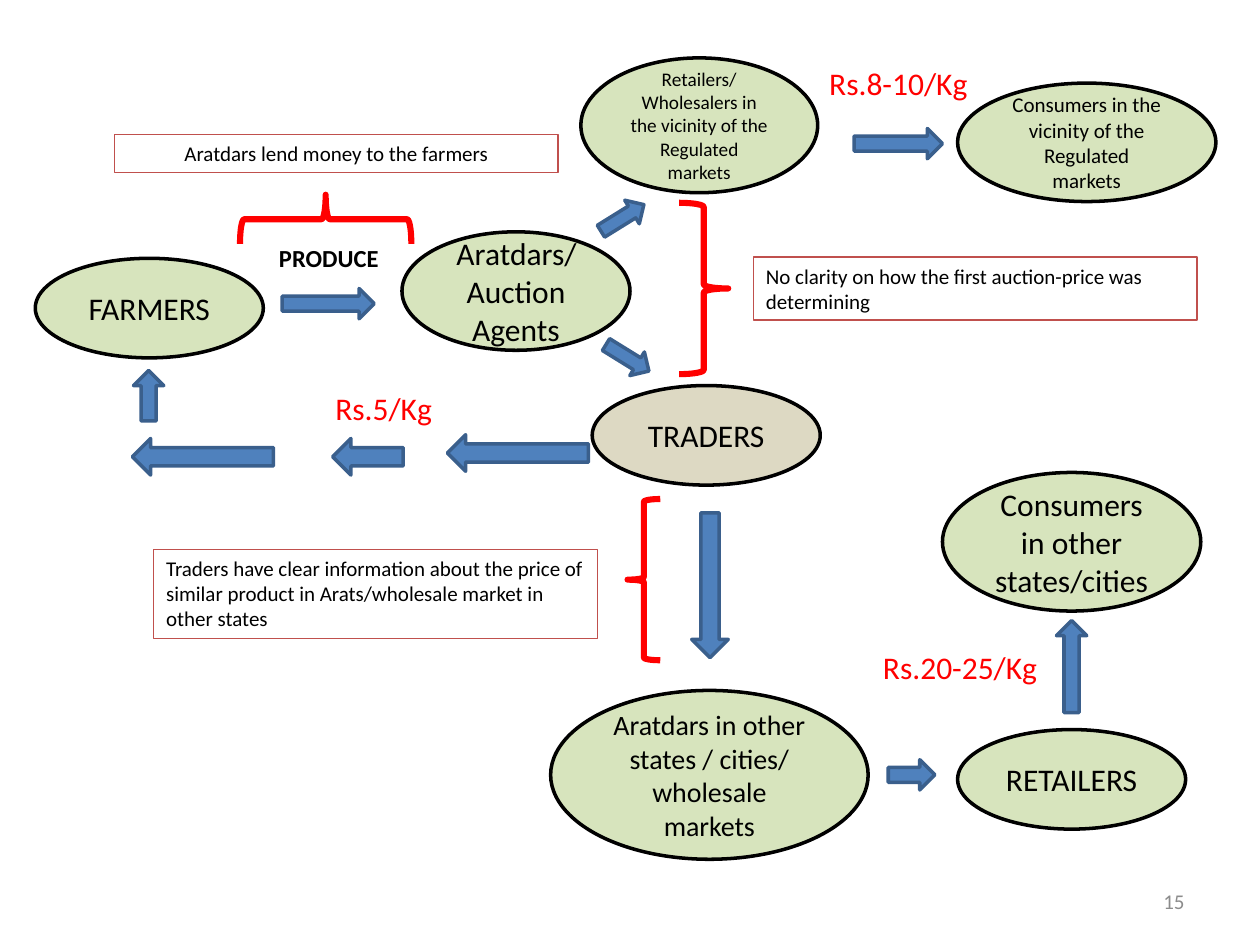
from pptx import Presentation
from pptx.dml.color import RGBColor
from pptx.enum.shapes import MSO_SHAPE
from pptx.enum.text import MSO_ANCHOR, PP_ALIGN
from pptx.util import Inches, Pt

FONT = "Calibri"
BLACK = RGBColor(0x00, 0x00, 0x00)
GREEN = RGBColor(0xD7, 0xE4, 0xBD)
TAN = RGBColor(0xDD, 0xD9, 0xC3)
BLUE = RGBColor(0x4F, 0x81, 0xBD)
DARK_BLUE = RGBColor(0x3A, 0x5F, 0x8C)
RED = RGBColor(0xFF, 0x00, 0x00)
BRICK = RGBColor(0xC0, 0x50, 0x4D)
GREY = RGBColor(0x8C, 0x8C, 0x8C)

# Each box is (left, top, width, height) in inches
NODES = [
    ("FARMERS", (0.28, 2.05, 1.81, 0.79), 18, GREEN),
    ("Aratdars/Auction Agents", (3.19, 1.84, 1.81, 0.94), 18, GREEN),
    ("TRADERS", (4.7, 3.06, 1.81, 0.79), 18, TAN),
    ("Retailers/Wholesalers in the vicinity of the Regulated markets",
     (4.61, 0.46, 1.88, 1.07), 11, GREEN),
    ("Aratdars in other states / cities/ wholesale markets",
     (4.37, 5.48, 2.52, 1.34), 16, GREEN),
    ("Consumers in the vicinity of the Regulated markets",
     (7.6, 0.66, 2.05, 0.94), 12, GREEN),
    ("RETAILERS", (7.6, 5.79, 1.81, 0.79), 18, GREEN),
    ("Consumers in other states/cities", (7.48, 3.75, 2.05, 1.1), 18, GREEN),
]
# Box before rotation, then rotation in degrees
ARROWS = [
    ((2.24, 2.29, 0.73, 0.24), 0),      # farmers to agents
    ((5.06, 4.5, 1.15, 0.29), 90),      # traders to other states
    ((7.05, 6.03, 0.37, 0.24), 0),      # other states to retailers
    ((8.14, 5.17, 0.73, 0.24), 270),    # retailers to consumers
    ((4.78, 2.73, 0.4, 0.22), 31.7),    # agents to traders
    ((4.74, 1.62, 0.4, 0.22), 328.2),   # agents to local retailers
    ((6.78, 1.02, 0.7, 0.24), 0),       # local retailers to consumers
    ((3.55, 3.45, 1.12, 0.29), 180),    # traders back to farmers
    ((2.64, 3.48, 0.56, 0.29), 180),
    ((1.05, 3.48, 1.12, 0.29), 180),
    ((0.98, 3.02, 0.4, 0.24), 270),
]
BRACES = [
    ((5.39, 1.61, 0.39, 1.36), 0),
    ((2.39, 1.06, 0.39, 1.36), 270),
    ((4.98, 3.96, 0.26, 1.28), 180),
]
PRICES = [
    ("Rs.5/Kg", (2.48, 3.04, 1.13, 0.4)),
    ("Rs.8-10/Kg", (6.36, 0.46, 1.54, 0.4)),
    ("Rs.20-25/Kg", (6.85, 5.09, 1.54, 0.4)),
]
NOTES = [
    ("No clarity on how the first auction-price was determining",
     (5.98, 2.04, 3.52, 0.5), PP_ALIGN.LEFT),
    ("Aratdars lend money to the farmers",
     (0.91, 1.07, 3.52, 0.3), PP_ALIGN.CENTER),
    ("Traders have clear information about the price of similar product "
     "in Arats/wholesale market in other states",
     (1.22, 4.36, 3.52, 0.71), PP_ALIGN.LEFT),
]


def write(sp, text, size, color=BLACK, align=PP_ALIGN.CENTER,
          anchor=MSO_ANCHOR.TOP, bold=False):
    tf = sp.text_frame
    tf.word_wrap = True
    tf.vertical_anchor = anchor
    tf.text = text
    p = tf.paragraphs[0]
    p.alignment = align
    font = p.runs[0].font
    font.name, font.size, font.bold = FONT, Pt(size), bold
    font.color.rgb = color


def add_shape(s, kind, box, line, width, fill=None, rotation=0):
    sp = s.shapes.add_shape(kind, *map(Inches, box))
    sp.shadow.inherit = False
    sp.rotation = rotation
    if fill is None:
        sp.fill.background()
    else:
        sp.fill.solid()
        sp.fill.fore_color.rgb = fill
    sp.line.color.rgb = line
    sp.line.width = Pt(width)
    return sp


def add_label(s, text, box, size, **style):
    tb = s.shapes.add_textbox(*map(Inches, box))
    write(tb, text, size, **style)


def add_node(s, text, box, size, fill):
    sp = add_shape(s, MSO_SHAPE.OVAL, box, BLACK, 2, fill)
    write(sp, text, size, anchor=MSO_ANCHOR.MIDDLE)


def add_note(s, text, box, align):
    sp = add_shape(s, MSO_SHAPE.RECTANGLE, box, BRICK, 0.75)
    write(sp, text, 12, align=align)


def build_market_chain(s):
    # Participants and flows
    for node in NODES:
        add_node(s, *node)
    for box, rotation in ARROWS:
        add_shape(s, MSO_SHAPE.RIGHT_ARROW, box, DARK_BLUE, 2, BLUE, rotation)

    # Labels on the flows
    add_label(s, "PRODUCE", (1.9, 1.88, 1.42, 0.34), 14, bold=True)
    for text, box in PRICES:
        add_label(s, text, box, 18, color=RED)

    # Braces with their remarks
    for box, rotation in BRACES:
        add_shape(s, MSO_SHAPE.RIGHT_BRACE, box, RED, 3.5, rotation=rotation)
    for note in NOTES:
        add_note(s, *note)

    # Slide number
    add_label(s, "15", (7.17, 6.95, 2.33, 0.4), 12, color=GREY,
              align=PP_ALIGN.RIGHT, anchor=MSO_ANCHOR.MIDDLE)


def main():
    prs = Presentation()
    prs.slide_width, prs.slide_height = Inches(10), Inches(7.5)
    s = prs.slides.add_slide(prs.slide_layouts[6])
    build_market_chain(s)
    prs.save("out.pptx")


if __name__ == "__main__":
    main()
